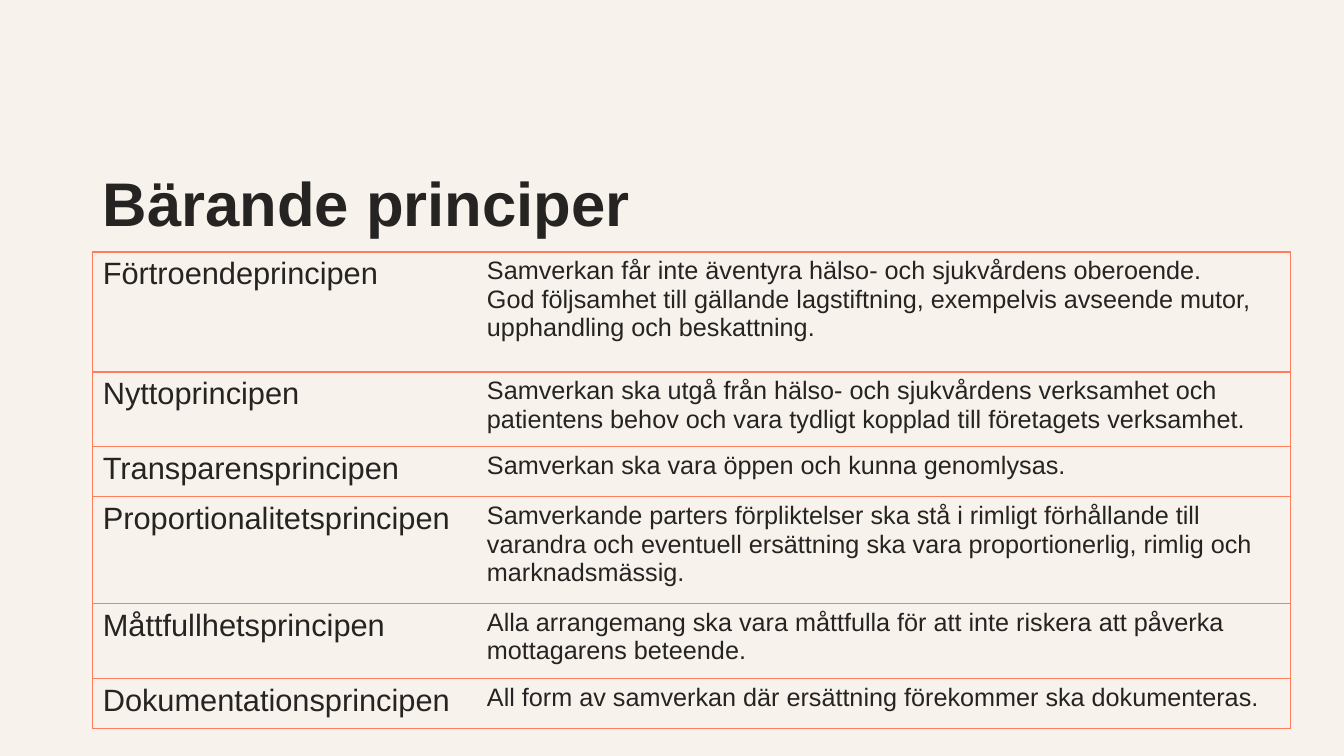
from pptx import Presentation
from pptx.dml.color import RGBColor
from pptx.enum.text import MSO_ANCHOR, PP_ALIGN
from pptx.oxml import parse_xml
from pptx.oxml.ns import nsdecls
from pptx.util import Inches, Pt

COLORS = {"back": "F7F2EB", "text": "262422", "line": "FF7C5D"}
FONT = "Arial"
WIDTHS = [3.81, 8.07]
# Name, height in inches, paragraphs
ROWS = [
    ("Förtroendeprincipen", 1.19, [
        "Samverkan får inte äventyra hälso- och sjukvårdens oberoende.",
        "God följsamhet till gällande lagstiftning, exempelvis avseende mutor, "
        "upphandling och beskattning."]),
    ("Nyttoprincipen", 0.74, [
        "Samverkan ska utgå från hälso- och sjukvårdens verksamhet och patientens "
        "behov och vara tydligt kopplad till företagets verksamhet."]),
    ("Transparensprincipen", 0.5, [
        "Samverkan ska vara öppen och kunna genomlysas."]),
    ("Proportionalitetsprincipen", 1.06, [
        "Samverkande parters förpliktelser ska stå i rimligt förhållande till varandra "
        "och eventuell ersättning ska vara proportionerlig, rimlig och marknadsmässig."]),
    ("Måttfullhetsprincipen", 0.74, [
        "Alla arrangemang ska vara måttfulla för att inte riskera att påverka "
        "mottagarens beteende."]),
    ("Dokumentationsprincipen", 0.5, [
        "All form av samverkan där ersättning förekommer ska dokumenteras."]),
]


def color(name):
    return RGBColor.from_string(COLORS[name])


def style(para, size, bold=False):
    font = para.font
    font.name, font.size, font.bold = FONT, Pt(size), bold
    font.color.rgb = color("text")


def add_title(slide, text):
    title = slide.shapes.title
    title.left, title.top = Inches(0.92), Inches(1.64)
    title.width, title.height = Inches(8), Inches(0.79)
    frame = title.text_frame
    frame.text = text
    frame.vertical_anchor = MSO_ANCHOR.BOTTOM
    para = frame.paragraphs[0]
    para.alignment = PP_ALIGN.LEFT
    para.line_spacing = 0.9
    style(para, 44, bold=True)


def set_lines(cell, sides):
    """Draw the given sides of a cell and clear the others."""
    props = cell._tc.get_or_add_tcPr()
    for place, side in enumerate("LRTB"):
        fill = (f'<a:solidFill><a:srgbClr val="{COLORS["line"]}"/></a:solidFill>'
                if side in sides else "<a:noFill/>")
        props.insert(place, parse_xml(
            f'<a:ln{side} {nsdecls("a")} w="{Pt(1)}">{fill}</a:ln{side}>'))


def fill_cell(cell, lines, size, sides):
    cell.text = "\n".join(lines)
    for para in cell.text_frame.paragraphs:
        style(para, size)
    cell.fill.background()
    set_lines(cell, sides)


def add_rules(slide):
    table = slide.shapes.add_table(
        len(ROWS), len(WIDTHS), Inches(0.92), Inches(2.5),
        Inches(sum(WIDTHS)), Inches(sum(row[1] for row in ROWS))).table
    table.first_row = table.horz_banding = False
    for col, width in zip(table.columns, WIDTHS):
        col.width = Inches(width)
    for index, (name, height, lines) in enumerate(ROWS):
        table.rows[index].height = Inches(height)
        fill_cell(table.cell(index, 0), [name], 22, "LTB")
        fill_cell(table.cell(index, 1), lines, 18, "RTB")


def main():
    deck = Presentation()
    deck.slide_width, deck.slide_height = Inches(13.33), Inches(7.5)
    slide = deck.slides.add_slide(deck.slide_layouts[5])
    back = slide.background.fill
    back.solid()
    back.fore_color.rgb = color("back")
    add_title(slide, "Bärande principer")
    add_rules(slide)
    deck.save("out.pptx")


if __name__ == "__main__":
    main()
